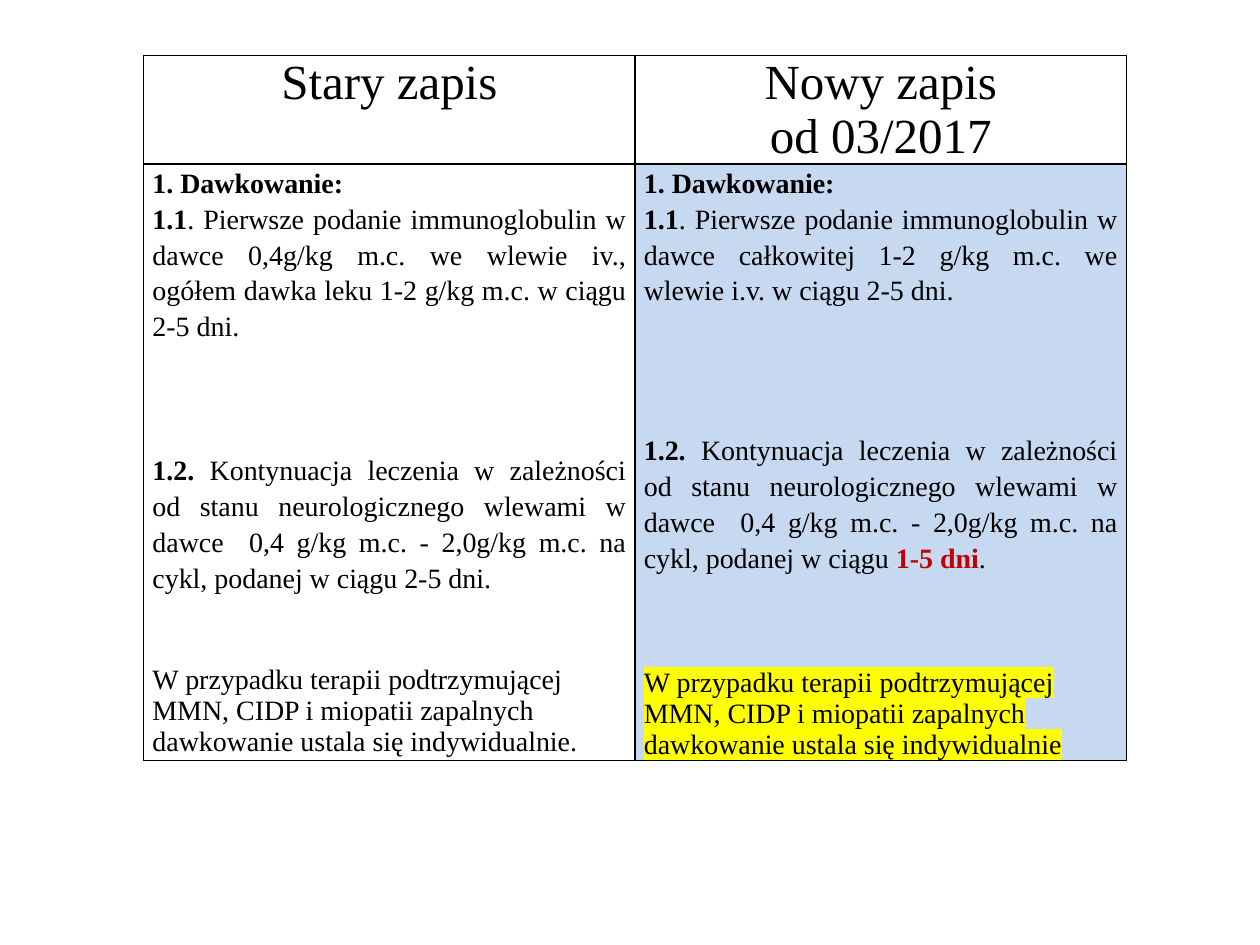
from lxml import etree
from pptx import Presentation
from pptx.dml.color import RGBColor
from pptx.enum.text import PP_ALIGN
from pptx.oxml.ns import qn
from pptx.util import Inches, Pt

CENTER, JUSTIFY, LEFT = PP_ALIGN.CENTER, PP_ALIGN.JUSTIFY, PP_ALIGN.LEFT
FONT = "Times New Roman"
COLORS = {
    "text": "000000",
    "paper": "FFFFFF",
    "new": "C6D9F1",
    "change": "C00000",
    "marker": "FFFF00",
}
BLANK = 6

# Texts shared by both columns
HEADING = "1. Dawkowanie:"
FIRST_DOSE = ". Pierwsze podanie immunoglobulin w dawce "
CONTINUATION = (
    "Kontynuacja leczenia w zależności od stanu neurologicznego wlewami w "
    "dawce  0,4 g/kg m.c. - 2,0g/kg m.c. na cykl, podanej w ciągu "
)
MAINTENANCE = (
    "W przypadku terapii podtrzymującej MMN, CIDP i miopatii zapalnych "
    "dawkowanie ustala się indywidualnie"
)


def rgb(name):
    return RGBColor.from_string(COLORS[name])


def add_color(parent, tag, name):
    holder = etree.SubElement(parent, qn(tag))
    etree.SubElement(holder, qn("a:srgbClr"), val=COLORS[name])


def add_borders(cell, width=Pt(1)):
    properties = cell._tc.get_or_add_tcPr()
    for position, side in enumerate(("a:lnL", "a:lnR", "a:lnT", "a:lnB")):
        line = etree.Element(qn(side), w=str(width))
        add_color(line, "a:solidFill", "text")
        properties.insert(position, line)


def style_cell(cell, fill):
    cell.margin_left = cell.margin_right = Inches(0.07)
    cell.margin_top = cell.margin_bottom = 0
    cell.fill.solid()
    cell.fill.fore_color.rgb = rgb(fill)
    add_borders(cell)


def add_span(para, text, bold=False, color="text", marker=None):
    span = para.add_run()
    span.text = text
    span.font.bold = bold
    span.font.color.rgb = rgb(color)
    if marker:
        add_color(span._r.get_or_add_rPr(), "a:highlight", marker)


def fill_cell(cell, paragraphs, size):
    """Each paragraph is (alignment, line spacing, points before, spans)."""
    frame = cell.text_frame
    for index, (alignment, spacing, before, spans) in enumerate(paragraphs):
        para = frame.add_paragraph() if index else frame.paragraphs[0]
        para.alignment = alignment
        para.line_spacing = spacing
        para.space_before = Pt(before)
        para.font.name = FONT
        para.font.size = Pt(size)
        for text, options in spans:
            add_span(para, text, **options)


def header(*lines):
    return [(CENTER, 1.0, 0, [(line, {})]) for line in lines]


def dosing(first_dose, duration, maintenance, gaps):
    """Body of one column; gaps are the points above its last two parts."""
    bold = {"bold": True}
    return [
        (JUSTIFY, 1.15, 0, [(HEADING, bold)]),
        (JUSTIFY, 1.15, 0, [("1.1", bold), (FIRST_DOSE + first_dose, {})]),
        (JUSTIFY, 1.15, gaps[0], [("1.2. ", bold), (CONTINUATION, {}), *duration]),
        (LEFT, 1.0, gaps[1], [maintenance]),
    ]


def add_comparison(page, headers, bodies):
    frame = page.shapes.add_table(
        2, 2, Inches(1.14), Inches(0.44), Inches(7.8), Inches(4.96))
    table = frame.table
    table.first_row = table.horz_banding = False
    for row, height in zip(table.rows, (0.79, 4.17)):
        row.height = Inches(height)
    for column, (title, body) in enumerate(zip(headers, bodies)):
        table.columns[column].width = Inches(3.9)
        style_cell(table.cell(0, column), "paper")
        style_cell(table.cell(1, column), ("paper", "new")[column])
        fill_cell(table.cell(0, column), title, 28)
        fill_cell(table.cell(1, column), body, 16)


def main():
    deck = Presentation()
    deck.slide_width, deck.slide_height = Inches(10), Inches(7.5)
    page = deck.slides.add_slide(deck.slide_layouts[BLANK])

    # Old wording
    old = dosing(
        "0,4g/kg m.c. we wlewie iv., ogółem dawka leku 1-2 g/kg m.c. "
        "w ciągu 2-5 dni.",
        [("2-5 dni.", {})],
        (MAINTENANCE + ".", {}),
        (62, 40),
    )
    # New wording, with the changes marked
    new = dosing(
        "całkowitej 1-2 g/kg m.c. we wlewie i.v. w ciągu 2-5 dni.",
        [("1-5 dni", {"bold": True, "color": "change"}), (".", {})],
        (MAINTENANCE, {"marker": "marker"}),
        (71, 53),
    )
    headers = header("Stary zapis"), header("Nowy zapis", "od 03/2017")
    add_comparison(page, headers, (old, new))
    deck.save("out.pptx")


if __name__ == "__main__":
    main()
